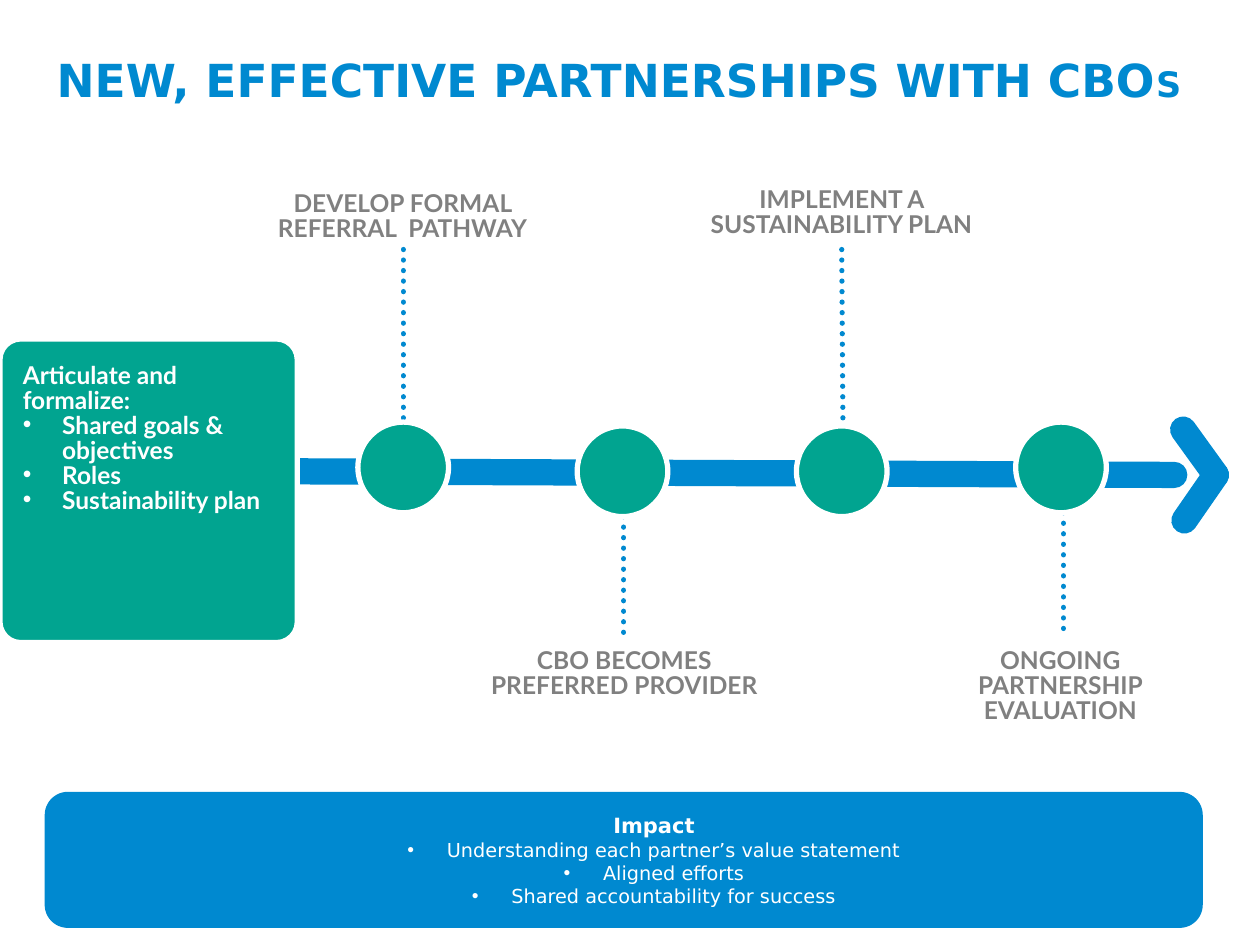
from dataclasses import dataclass

from lxml.etree import SubElement
from pptx import Presentation
from pptx.dml.color import RGBColor
from pptx.enum.dml import MSO_LINE
from pptx.enum.shapes import MSO_CONNECTOR, MSO_SHAPE
from pptx.enum.text import MSO_ANCHOR, MSO_AUTO_SIZE, PP_ALIGN
from pptx.oxml.ns import qn
from pptx.util import Pt


@dataclass(frozen=True)
class Theme:
    """Colours, fonts and type sizes of the slide."""
    blue: RGBColor = RGBColor(0x00, 0x89, 0xD0)
    green: RGBColor = RGBColor(0x01, 0xA4, 0x90)
    gray: RGBColor = RGBColor(0x80, 0x80, 0x80)
    white: RGBColor = RGBColor(0xFF, 0xFF, 0xFF)
    heading_font: str = "DejaVu Sans"
    label_font: str = "Lato"
    title: Pt = Pt(26)
    title_small: Pt = Pt(20)
    label: Pt = Pt(14)
    impact: Pt = Pt(12)
    impact_item: Pt = Pt(11)


THEME = Theme()
FIRST_X, STEP_X, DOT = 230.4, 125.3, 51.8
LABEL_H = 36
STEPS = [
    ("DEVELOP FORMAL REFERRAL  PATHWAY", 241.2, (150.5, 106.6, 159.1), (230.4, 142.6, 230.4, 258.5)),
    ("CBO BECOMES PREFERRED PROVIDER", 243.4, (267.1, 367.9, 179.3), (356.4, 295.2, 356.4, 362.9)),
    ("IMPLEMENT A SUSTAINABILITY PLAN", 243.4, (386.6, 104.4, 188.6), (481, 142.6, 481.7, 244.8)),
    ("ONGOING PARTNERSHIP EVALUATION", 241.2, (517, 367.9, 177.8), (607.7, 293, 607.7, 361.4)),
]
ARROW = [(160.6, 269.3, 671, 271.4), (676.1, 245.5, 694.8, 271.4), (676.8, 297.4, 694.8, 271.4)]
GOALS = ["Shared goals & objectives", "Roles", "Sustainability plan"]
IMPACTS = ["Understanding each partner’s value statement", "Aligned efforts",
           "Shared accountability for success"]


def apply(obj, formats):
    """Set each attribute in a dict of format values."""
    for name, value in formats.items():
        setattr(obj, name, value)


def place(sp, left, top, width, height):
    """Move and size a shape, in points."""
    apply(sp, dict(left=Pt(left), top=Pt(top), width=Pt(width), height=Pt(height)))


def font_format(name, size, color, bold=True):
    """Gather the format values of a run."""
    return dict(name=name, size=size, bold=bold), color


def add_run(p, text, style):
    """Add a formatted run to a paragraph."""
    r = p.add_run()
    r.text = text
    formats, color = style
    apply(r.font, formats)
    r.font.color.rgb = color


def set_bullet(p, char=None):
    """Give a paragraph a hanging bullet, or none."""
    pPr = p._p.get_or_add_pPr()
    indent = Pt(22.5) if char else 0
    pPr.set("marL", str(indent))
    pPr.set("indent", str(-indent))
    if char:
        SubElement(pPr, qn("a:buChar")).set("char", char)
    else:
        SubElement(pPr, qn("a:buNone"))


def add_line(s, ends, width, dash=None):
    """Add a round-capped blue line."""
    line = s.shapes.add_connector(MSO_CONNECTOR.STRAIGHT, *map(Pt, ends))
    line.line.color.rgb = THEME.blue
    apply(line.line, dict(width=Pt(width), dash_style=dash))
    line.line._get_or_add_ln().set("cap", "rnd")
    SubElement(line.element.spPr, qn("a:effectLst"))


def add_shape(s, kind, box, fill, outline, width, corner=None):
    """Add a filled and outlined preset shape."""
    sp = s.shapes.add_shape(kind, *map(Pt, box))
    sp.shadow.inherit = False
    sp.fill.solid()
    sp.fill.fore_color.rgb = fill
    sp.line.color.rgb = outline
    sp.line.width = Pt(width)
    if corner:
        sp.adjustments[0] = corner


def add_label(s, text, left, top, width):
    """Add a centred step label."""
    sp = s.shapes.add_textbox(*map(Pt, (left, top, width, LABEL_H)))
    apply(sp.text_frame, dict(word_wrap=True, auto_size=MSO_AUTO_SIZE.SHAPE_TO_FIT_TEXT))
    p = sp.text_frame.paragraphs[0]
    apply(p, dict(alignment=PP_ALIGN.CENTER, line_spacing=0.85))
    add_run(p, text, font_format(THEME.label_font, THEME.label, THEME.gray))


def add_step(s, index, text, top, label, stem):
    """Add one milestone with its stem and label."""
    left = FIRST_X + index * STEP_X - DOT / 2
    add_line(s, stem, 3, MSO_LINE.ROUND_DOT)
    add_shape(s, MSO_SHAPE.OVAL, (left, top, DOT, DOT), THEME.green, THEME.white, 3)
    add_label(s, text, *label)


def fill_title(sp):
    """Write the slide title."""
    place(sp, 25.2, 25.9, 659.5, 66.2)
    apply(sp.text_frame, dict(vertical_anchor=MSO_ANCHOR.TOP, auto_size=MSO_AUTO_SIZE.NONE))
    p = sp.text_frame.paragraphs[0]
    p.alignment = PP_ALIGN.LEFT
    for text, size in [("NEW, EFFECTIVE PARTNERSHIPS WITH CBO", THEME.title), ("S", THEME.title_small)]:
        add_run(p, text, font_format(THEME.heading_font, size, THEME.blue))


def fill_list(sp, box, heading, items, head_style, item_style, layout):
    """Write a heading and bullets in a body placeholder and bring it to the front."""
    sp.element.getparent().append(sp.element)
    place(sp, *box)
    tf = sp.text_frame
    apply(tf, dict(word_wrap=True, auto_size=MSO_AUTO_SIZE.SHAPE_TO_FIT_TEXT))
    for i, text in enumerate([heading, *items]):
        p = tf.add_paragraph() if i else tf.paragraphs[0]
        apply(p, dict(space_before=Pt(0), **layout))
        set_bullet(p, "•" if i else None)
        add_run(p, text, item_style if i else head_style)


def main():
    """Build the slide and save it."""
    prs = Presentation()
    apply(prs, dict(slide_width=Pt(720), slide_height=Pt(540)))
    s = prs.slides.add_slide(prs.slide_layouts[3])
    title, goals, impact = s.placeholders
    fill_title(title)

    for ends in ARROW:
        add_line(s, ends, 15)
    add_shape(s, MSO_SHAPE.ROUNDED_RECTANGLE, (0, 193.7, 169.9, 173.5),
              THEME.green, THEME.white, 3, 0.07)
    label_style = font_format(THEME.label_font, THEME.label, THEME.white)
    fill_list(goals, (5.8, 204.5, 155.5, 108), "Articulate and formalize:", GOALS,
              label_style, label_style, dict(alignment=PP_ALIGN.LEFT, line_spacing=0.85))

    for index, step in enumerate(STEPS):
        add_step(s, index, *step)

    add_shape(s, MSO_SHAPE.ROUNDED_RECTANGLE, (25.9, 452.9, 661, 77),
              THEME.blue, THEME.blue, 0.75)
    fill_list(impact, (43.2, 460.8, 661, 61.9), "Impact", IMPACTS,
              font_format(THEME.heading_font, THEME.impact, THEME.white),
              font_format(THEME.heading_font, THEME.impact_item, THEME.white, False),
              dict(alignment=PP_ALIGN.CENTER))
    prs.save("out.pptx")


if __name__ == "__main__":
    main()
